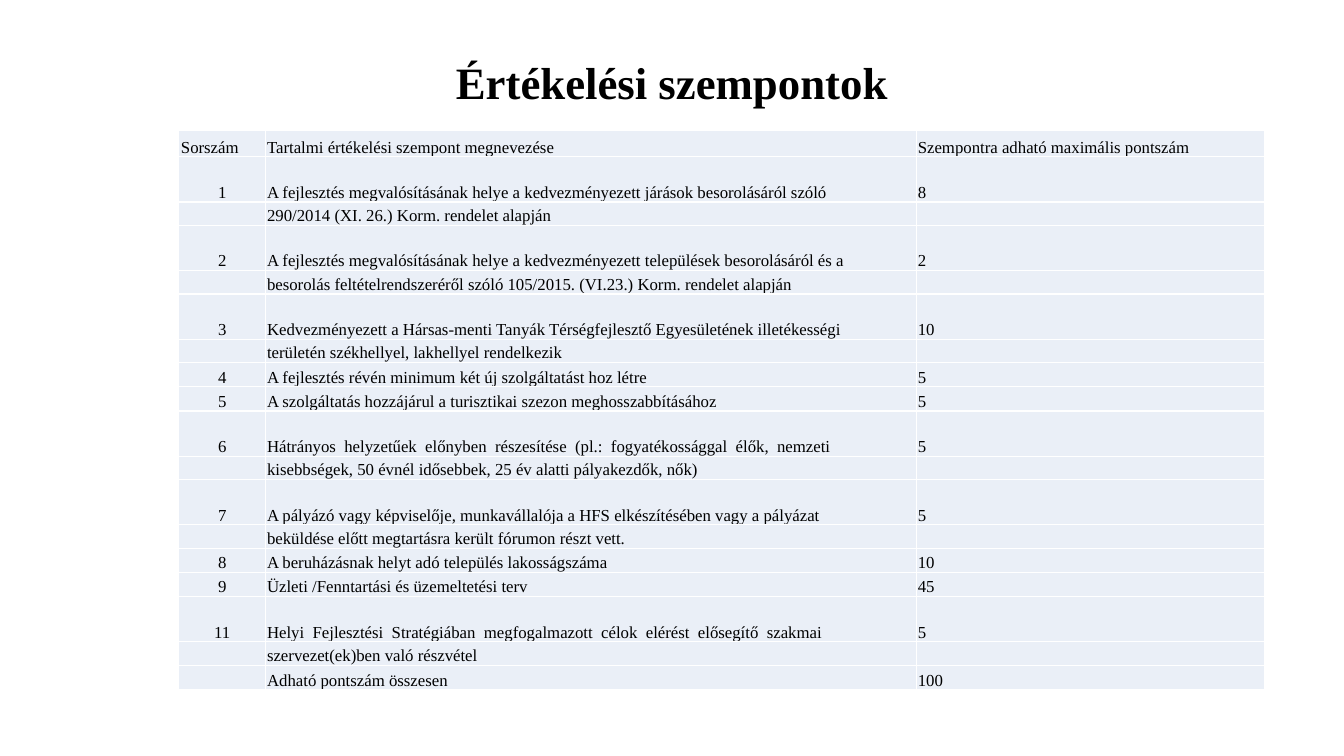
from lxml.etree import SubElement
from pptx import Presentation
from pptx.dml.color import RGBColor
from pptx.enum.text import MSO_ANCHOR, PP_ALIGN
from pptx.oxml.ns import qn
from pptx.util import Cm, Pt

COLORS = {"text": "000000", "cell": "EAEFF7", "border": "FFFFFF"}
FONT = "Times New Roman"

HEADINGS = (
    "Sorszám",
    "Tartalmi értékelési szempont megnevezése",
    "Szempontra adható maximális pontszám",
)
# Number, lines of the criterion, maximum score
CRITERIA = [
    ("1", ["A fejlesztés megvalósításának helye a kedvezményezett járások besorolásáról szóló",
           "290/2014 (XI. 26.) Korm. rendelet alapján"], "8"),
    ("2", ["A fejlesztés megvalósításának helye a kedvezményezett települések besorolásáról és a",
           "besorolás feltételrendszeréről szóló 105/2015. (VI.23.) Korm. rendelet alapján"], "2"),
    ("3", ["Kedvezményezett a Hársas-menti Tanyák Térségfejlesztő Egyesületének illetékességi",
           "területén székhellyel, lakhellyel rendelkezik"], "10"),
    ("4", ["A fejlesztés révén minimum két új szolgáltatást hoz létre"], "5"),
    ("5", ["A szolgáltatás hozzájárul a turisztikai szezon meghosszabbításához"], "5"),
    ("6", ["Hátrányos  helyzetűek  előnyben  részesítése  (pl.:  fogyatékossággal  élők,  nemzeti",
           "kisebbségek, 50 évnél idősebbek, 25 év alatti pályakezdők, nők)"], "5"),
    ("7", ["A pályázó vagy képviselője, munkavállalója a HFS elkészítésében vagy a pályázat",
           "beküldése előtt megtartásra került fórumon részt vett."], "5"),
    ("8", ["A beruházásnak helyt adó település lakosságszáma"], "10"),
    ("9", ["Üzleti /Fenntartási és üzemeltetési terv"], "45"),
    ("11", ["Helyi  Fejlesztési  Stratégiában  megfogalmazott  célok  elérést  elősegítő  szakmai",
            "szervezet(ek)ben való részvétel"], "5"),
]
TOTAL = ("", "Adható pontszám összesen", "100")

COLUMN_WIDTHS = (2.2, 16.4, 8.78)
HEADING_HEIGHT, TOTAL_HEIGHT = 0.66, 0.62
SINGLE_HEIGHT, FIRST_LINE_HEIGHT, SECOND_LINE_HEIGHT = 0.61, 1.14, 0.59


def table_rows():
    """List each row as its height in cm and its three texts."""
    rows = [(HEADING_HEIGHT, HEADINGS)]
    for number, lines, score in CRITERIA:
        height = FIRST_LINE_HEIGHT if len(lines) > 1 else SINGLE_HEIGHT
        rows.append((height, (number, lines[0], score)))
        rows += [(SECOND_LINE_HEIGHT, ("", line, "")) for line in lines[1:]]
    return rows + [(TOTAL_HEIGHT, TOTAL)]


def style_font(font, size, bold=False):
    font.name = FONT
    font.size = Pt(size)
    font.bold = bold
    font.color.rgb = RGBColor.from_string(COLORS["text"])


def add_title(slide, text):
    title = slide.shapes.title
    title.left, title.top = Cm(2.33), Cm(1.01)
    title.width, title.height = Cm(29.21), Cm(2.27)
    title.text_frame.text = text
    title.text_frame.vertical_anchor = MSO_ANCHOR.MIDDLE
    paragraph = title.text_frame.paragraphs[0]
    paragraph.alignment = PP_ALIGN.CENTER
    paragraph.line_spacing = 0.9
    style_font(paragraph.font, 32, bold=True)


def add_borders(cell):
    properties = cell._tc.get_or_add_tcPr()
    for position, side in enumerate(("lnL", "lnR", "lnT", "lnB")):
        line = SubElement(properties, qn(f"a:{side}"), w=str(Pt(1)))
        fill = SubElement(line, qn("a:solidFill"))
        SubElement(fill, qn("a:srgbClr"), val=COLORS["border"])
        properties.insert(position, line)


def fill_cell(cell, text, indent, alignment):
    cell.text = text
    cell.vertical_anchor = MSO_ANCHOR.BOTTOM
    cell.margin_left = Cm(indent)
    cell.margin_right = cell.margin_top = cell.margin_bottom = 0
    paragraph = cell.text_frame.paragraphs[0]
    paragraph.alignment = alignment
    style_font(paragraph.font, 12)
    cell.fill.solid()
    cell.fill.fore_color.rgb = RGBColor.from_string(COLORS["cell"])
    add_borders(cell)


def add_criteria_table(slide):
    rows = table_rows()
    frame = slide.shapes.add_table(
        len(rows), len(COLUMN_WIDTHS), Cm(4.5), Cm(3.29),
        Cm(sum(COLUMN_WIDTHS)), Cm(sum(height for height, _ in rows)))
    criteria = frame.table
    for column, width in zip(criteria.columns, COLUMN_WIDTHS):
        column.width = Cm(width)
    for r, (height, texts) in enumerate(rows):
        criteria.rows[r].height = Cm(height)
        for c, text in enumerate(texts):
            is_number = c == 0 and r > 0
            indent = 0 if is_number else 0.06 if c == 0 else 0.03
            alignment = PP_ALIGN.CENTER if is_number else PP_ALIGN.LEFT
            fill_cell(criteria.cell(r, c), text, indent, alignment)


def main():
    presentation = Presentation()
    presentation.slide_width, presentation.slide_height = Cm(33.87), Cm(19.05)
    slide = presentation.slides.add_slide(presentation.slide_layouts[5])
    add_title(slide, "Értékelési szempontok")
    add_criteria_table(slide)
    presentation.save("out.pptx")


if __name__ == "__main__":
    main()
